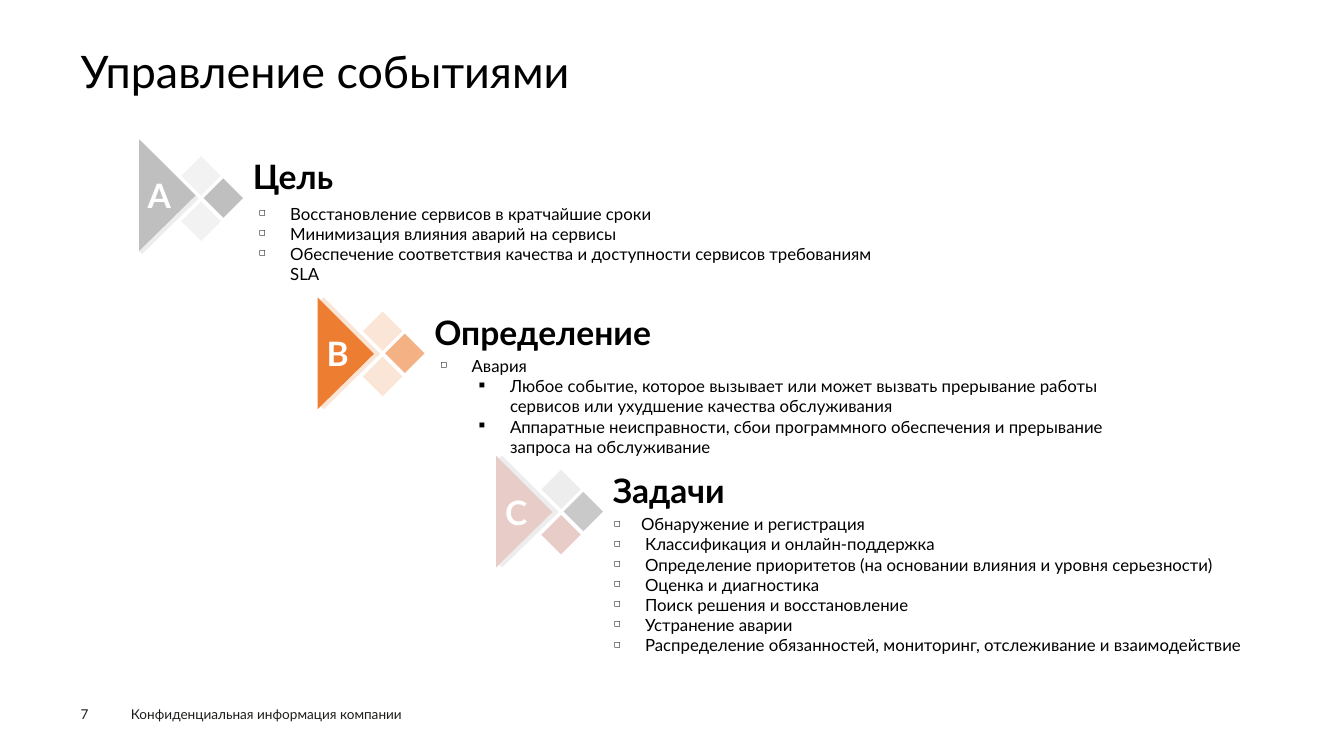
import pptx
import pptx.util
import pptx.dml.color
import pptx.enum.shapes
import pptx.enum.text
import pptx.oxml
import pptx.oxml.ns

Inches = pptx.util.Inches
ANCHOR = pptx.enum.text.MSO_ANCHOR
FONT = "Lato"
COLOURS = {
    "black": "000000", "white": "FFFFFF", "footer": "1D1D1B",
    "grey": "BFBFBF", "mid_grey": "C9C9C9", "light_grey": "EDEDED", "pale_grey": "F2F2F2",
    "orange": "ED7D31", "light_orange": "F4B183", "pale_orange": "FBE5D6", "rose": "E7CCC7",
}

# Marker geometry, relative to the marker's top left corner
DIAMOND = 0.39
DIAMOND_OFFSETS = [(0.45, 0.14), (0.45, 0.59), (0.67, 0.36)]
TRIANGLE = [(0, 0), (0.56, 0.56), (0, 1.11)]
TRIANGLE_SHADOW = [(0.06, 0), (0.62, 0.56), (0.06, 1.11), (0.03, 1.08), (0.56, 0.56), (0.03, 0.03)]

# Bullets: character, left margin, hanging indent
ITEM = ("◻", 0.31, 0.31)
FIRST_TASK = ("◻", 0.27, 0.27)
DETAIL = ("■", 0.69, 0.31)

SECTIONS = [
    {
        "letter": "A", "heading": "Цель", "marker": (1.35, 1.41), "shift": (0.03, -0.03),
        "triangle": "grey", "shadow": "light_grey",
        "diamonds": ["pale_grey", "pale_grey", "grey"],
        "body": (2.47, 1.97, 6.59, 1.15),
        "items": [
            (ITEM, "Восстановление сервисов в кратчайшие сроки"),
            (ITEM, "Минимизация влияния аварий на сервисы"),
            (ITEM, "Обеспечение соответствия качества и доступности сервисов требованиям SLA"),
        ],
    },
    {
        "letter": "B", "heading": "Определение", "marker": (3.15, 2.95), "shift": (0, 0),
        "triangle": "orange", "shadow": "pale_orange",
        "diamonds": ["pale_orange", "pale_orange", "light_orange"],
        "body": (4.27, 3.48, 7.1, 1.11),
        "items": [
            (ITEM, "Авария"),
            (DETAIL, "Любое событие, которое вызывает или может вызвать прерывание работы "
                     "сервисов или ухудшение качества обслуживания"),
            (DETAIL, "Аппаратные неисправности, сбои программного обеспечения и прерывание "
                     "запроса на обслуживание"),
        ],
    },
    {
        "letter": "C", "heading": "Задачи", "marker": (4.92, 4.52), "shift": (0, 0),
        "triangle": "rose", "shadow": "light_grey",
        "diamonds": ["light_grey", "rose", "mid_grey"],
        "body": (5.99, 5.05, 7.04, 1.15),
        "items": [
            (FIRST_TASK, "Обнаружение и регистрация"),
            (ITEM, "Классификация и онлайн-поддержка"),
            (ITEM, "Определение приоритетов (на основании влияния и уровня серьезности)"),
            (ITEM, "Оценка и диагностика"),
            (ITEM, "Поиск решения и восстановление"),
            (ITEM, "Устранение аварии"),
            (ITEM, "Распределение обязанностей, мониторинг, отслеживание и взаимодействие"),
        ],
    },
]


def colour(name):
    return pptx.dml.color.RGBColor.from_string(COLOURS[name])


def add_run(paragraph, text, size, colour_name="black", bold=False):
    run = paragraph.add_run()
    run.text = text
    run.font.name = FONT
    run.font.size = pptx.util.Pt(size)
    run.font.bold = bold
    run.font.color.rgb = colour(colour_name)


def set_margins(frame, left=0, top=0, right=0, bottom=0):
    frame.margin_left, frame.margin_top = Inches(left), Inches(top)
    frame.margin_right, frame.margin_bottom = Inches(right), Inches(bottom)


def add_text_box(shapes, box, anchor=ANCHOR.TOP):
    frame = shapes.add_textbox(*map(Inches, box)).text_frame
    frame.word_wrap = True
    frame.vertical_anchor = anchor
    return frame


def paint(shape, colour_name):
    shape.shadow.inherit = False
    shape.fill.solid()
    shape.fill.fore_color.rgb = colour(colour_name)
    shape.line.fill.background()


def add_outline(shapes, origin, points, colour_name):
    corners = [(Inches(origin[0] + x), Inches(origin[1] + y)) for x, y in points]
    builder = shapes.build_freeform(*corners[0])
    builder.add_line_segments(corners[1:], close=True)
    shape = builder.convert_to_shape()
    paint(shape, colour_name)
    return shape


def set_bullet(paragraph, bullet):
    character, margin, hanging = bullet
    properties = paragraph._p.get_or_add_pPr()
    properties.set("marL", str(Inches(margin)))
    properties.set("indent", str(-Inches(hanging)))
    for tag, attribute, value in [("buSzPct", "val", "50000"), ("buChar", "char", character)]:
        element = pptx.oxml.parse_xml(f'<a:{tag} {pptx.oxml.ns.nsdecls("a")}/>')
        element.set(attribute, value)
        properties.append(element)


def add_marker(shapes, section):
    left, top = section["marker"]
    for (x, y), name in zip(DIAMOND_OFFSETS, section["diamonds"]):
        diamond = shapes.add_shape(
            pptx.enum.shapes.MSO_SHAPE.DIAMOND,
            Inches(left + x), Inches(top + y), Inches(DIAMOND), Inches(DIAMOND))
        paint(diamond, name)
    add_outline(shapes, (left, top), TRIANGLE_SHADOW, section["shadow"])
    shift_x, shift_y = section["shift"]
    triangle = add_outline(shapes, (left + shift_x, top + shift_y), TRIANGLE, section["triangle"])
    frame = triangle.text_frame
    set_margins(frame, right=0.16)
    frame.vertical_anchor = ANCHOR.MIDDLE
    frame.paragraphs[0].alignment = pptx.enum.text.PP_ALIGN.CENTER
    add_run(frame.paragraphs[0], section["letter"], 24, "white", True)


def add_section(slide, section):
    shapes = slide.shapes.add_group_shape().shapes
    add_marker(shapes, section)
    body = add_text_box(shapes, section["body"])
    for index, (bullet, text) in enumerate(section["items"]):
        paragraph = body.add_paragraph() if index else body.paragraphs[0]
        set_bullet(paragraph, bullet)
        add_run(paragraph, text, 12)
    left, top = section["marker"]
    heading = add_text_box(shapes, (left + 1.06, top, 3.83, 0.59), ANCHOR.BOTTOM)
    add_run(heading.paragraphs[0], section["heading"], 24, bold=True)


def add_title(slide, text):
    title = slide.shapes.title
    title.left, title.top, title.width, title.height = map(Inches, (0.8, 0.49, 11.73, 0.54))
    frame = title.text_frame
    set_margins(frame)
    frame.auto_size = pptx.enum.text.MSO_AUTO_SIZE.NONE
    frame.vertical_anchor = ANCHOR.TOP
    paragraph = frame.paragraphs[0]
    paragraph.alignment = pptx.enum.text.PP_ALIGN.LEFT
    paragraph.line_spacing = 0.9
    add_run(paragraph, text, 32)


def add_footer(slide):
    number = add_text_box(slide.shapes, (0.8, 7, 0.55, 0.16))
    set_margins(number)
    add_run(number.paragraphs[0], "7", 9.7, "footer")
    notice = add_text_box(slide.shapes, (1.2, 6.95, 3.59, 0.26))
    add_run(notice.paragraphs[0], "Конфиденциальная информация компании", 9.7, "footer")


def main():
    presentation = pptx.Presentation()
    presentation.slide_width = Inches(13.33)
    presentation.slide_height = Inches(7.5)
    slide = presentation.slides.add_slide(presentation.slide_layouts[5])
    add_title(slide, "Управление событиями")
    for section in SECTIONS:
        add_section(slide, section)
    add_footer(slide)
    presentation.save("out.pptx")


if __name__ == "__main__":
    main()
